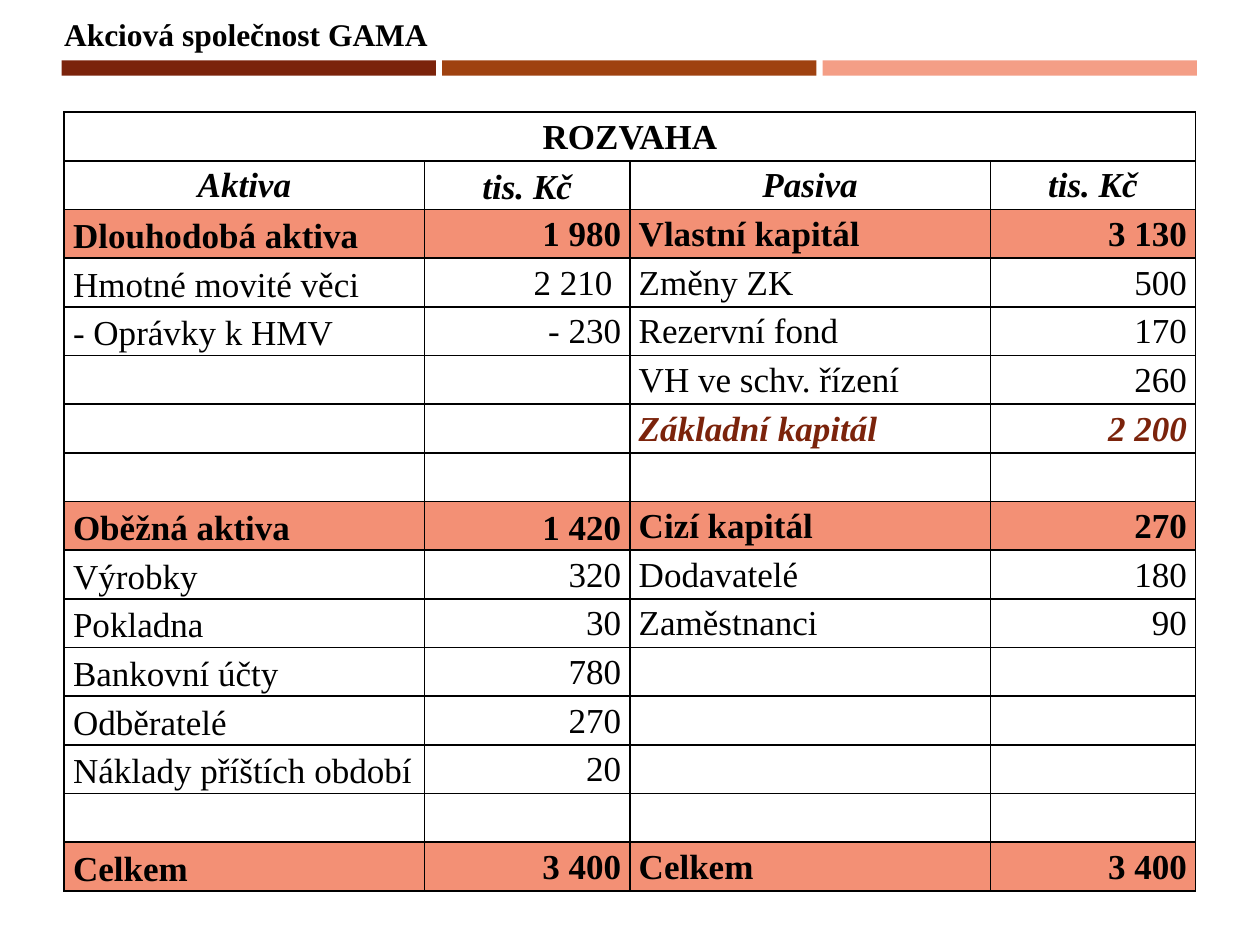
"""Build the balance sheet slide of the GAMA company."""
from dataclasses import dataclass

from lxml import etree
from pptx import Presentation
from pptx.dml.color import RGBColor
from pptx.enum.shapes import MSO_SHAPE
from pptx.enum.text import MSO_ANCHOR, MSO_AUTO_SIZE, PP_ALIGN
from pptx.oxml.ns import qn
from pptx.util import Inches, Pt

RECT = MSO_SHAPE.RECTANGLE
TOP, MIDDLE = MSO_ANCHOR.TOP, MSO_ANCHOR.MIDDLE
LEFT, CENTER, RIGHT, JUSTIFY = PP_ALIGN.LEFT, PP_ALIGN.CENTER, PP_ALIGN.RIGHT, PP_ALIGN.JUSTIFY
FIT = MSO_AUTO_SIZE.SHAPE_TO_FIT_TEXT


@dataclass
class Theme:
    font: str = "Times New Roman"
    title: int = 18
    body: int = 20
    ink: str = "000000"
    accent: str = "7B230B"
    band: str = "F39075"
    bars: tuple = ("7B230B", "9F4210", "F49E86")


theme = Theme()


def style(para, size, color, bold, italic=False):
    for run in para.runs:
        font = run.font
        font.name, font.size = theme.font, Pt(size)
        font.bold, font.italic = bold, italic
        font.color.rgb = RGBColor.from_string(color)


def border(cell):
    props = cell._tc.get_or_add_tcPr()
    for side in ("a:lnL", "a:lnR", "a:lnT", "a:lnB"):
        line = etree.SubElement(props, qn(side), w=str(Pt(1)))
        fill = etree.SubElement(line, qn("a:solidFill"))
        etree.SubElement(fill, qn("a:srgbClr"), val=theme.ink)


ROWS = [
    ("ROZVAHA", "", "", ""),
    ("Aktiva", "tis. Kč", "Pasiva", "tis. Kč"),
    ("Dlouhodobá aktiva", "1 980", "Vlastní kapitál", "3 130"),
    ("Hmotné movité věci", "2 210 ", "Změny ZK", "500"),
    ("- Oprávky k HMV", "- 230", "Rezervní fond", "170"),
    ("", "", "VH ve schv. řízení", "260"),
    ("", "", "Základní kapitál", "2 200"),
    ("", "", "", ""),
    ("Oběžná aktiva", "1 420", "Cizí kapitál", "270"),
    ("Výrobky", "320", "Dodavatelé", "180"),
    ("Pokladna", "30", "Zaměstnanci", "90"),
    ("Bankovní účty", "780", "", ""),
    ("Odběratelé", "270", "", ""),
    ("Náklady příštích období", "20", "", ""),
    ("", "", "", ""),
    ("Celkem", "3 400", "Celkem", "3 400"),
]
HEAD, CAPITAL = 1, 6
BANDS = (2, 8, 15)
MIDDLES = ((1, 1), (8, 1))
ALIGNS = (LEFT, RIGHT, JUSTIFY, RIGHT)
COLS = (2.86, 1.63, 2.86, 1.63)

deck = Presentation()
deck.slide_width, deck.slide_height = Inches(10), Inches(7.5)
slide = deck.slides.add_slide(deck.slide_layouts[6])
shapes = slide.shapes

for index, color in enumerate(theme.bars):
    bar = shapes.add_shape(RECT, Inches(0.49 + 3.02 * index), Inches(0.48), Inches(2.97), Inches(0.12))
    bar.shadow.inherit = False
    bar.fill.solid()
    bar.fill.fore_color.rgb = RGBColor.from_string(color)
    bar.line.fill.background()

title = shapes.add_textbox(Inches(0.41), Inches(0.07), Inches(3.12), Inches(0.4)).text_frame
title.word_wrap = False
title.auto_size = FIT
title.text = "Akciová společnost GAMA"
style(title.paragraphs[0], theme.title, theme.ink, True)

height = Inches(6.18)
frame = shapes.add_table(len(ROWS), len(COLS), Inches(0.51), Inches(0.89), Inches(sum(COLS)), height)
table = frame.table
table.first_row = table.horz_banding = False
for col, width in zip(table.columns, COLS):
    col.width = Inches(width)
for row in table.rows:
    row.height = height // len(ROWS)

for r, texts in enumerate(ROWS):
    for c, text in enumerate(texts):
        cell = table.cell(r, c)
        border(cell)
        cell.margin_left = cell.margin_right = Inches(0.07)
        cell.margin_top = cell.margin_bottom = 0
        if r in BANDS:
            cell.fill.solid()
            cell.fill.fore_color.rgb = RGBColor.from_string(theme.band)
        else:
            cell.fill.background()
        low = (c == 0 and r > HEAD) or (r, c) in MIDDLES
        cell.vertical_anchor = MIDDLE if low else TOP
        cell.text_frame.text = text
        para = cell.text_frame.paragraphs[0]
        para.alignment = CENTER if r <= HEAD else ALIGNS[c]
        para.line_spacing = 1.15
        color = theme.accent if r == CAPITAL else theme.ink
        bold = r <= HEAD or r == CAPITAL or r in BANDS
        style(para, theme.body, color, bold, r in (HEAD, CAPITAL))

table.cell(0, 0).merge(table.cell(0, len(COLS) - 1))
deck.save("out.pptx")
